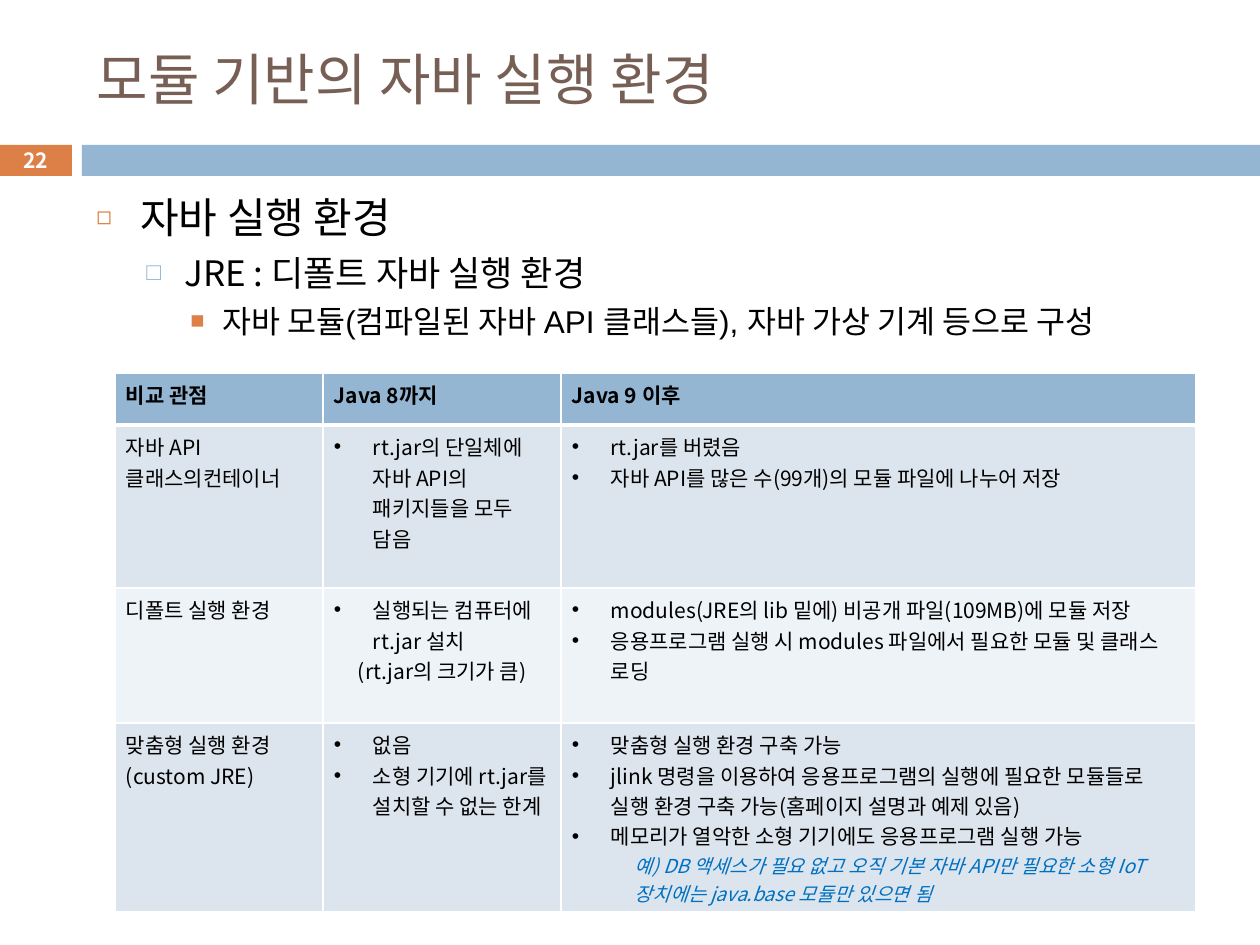
"""Builds a slide comparing Java runtime environments before and after modules."""
from lxml import etree
from pptx import Presentation
from pptx.dml.color import RGBColor
from pptx.enum.shapes import MSO_SHAPE
from pptx.enum.text import MSO_ANCHOR, PP_ALIGN
from pptx.oxml.ns import qn
from pptx.util import Pt

RECT = MSO_SHAPE.RECTANGLE
MIDDLE, TOP = MSO_ANCHOR.MIDDLE, MSO_ANCHOR.TOP
LEFT, CENTER = PP_ALIGN.LEFT, PP_ALIGN.CENTER

EMU_PER_PX = 914400 // 126
FONT = "Noto Sans CJK KR"
BLACK = RGBColor(0x00, 0x00, 0x00)
WHITE = RGBColor(0xFF, 0xFF, 0xFF)
BROWN = RGBColor(0x77, 0x5F, 0x55)
ORANGE = RGBColor(0xDD, 0x80, 0x47)
BLUE = RGBColor(0x94, 0xB6, 0xD2)
BAND_DARK = RGBColor(0xDC, 0xE5, 0xEE)
BAND_LIGHT = RGBColor(0xEE, 0xF3, 0xF7)
EXAMPLE_BLUE = RGBColor(0x00, 0x70, 0xC0)

TITLE = "모듈 기반의 자바 실행 환경"
PAGE = "22"

OUTLINE = [
    ("자바 실행 환경",
     dict(size=24, left=44, hang=44, before=7, bullet=("◻", ORANGE, 60))),
    ("JRE : 디폴트 자바 실행 환경",
     dict(size=20, left=88, hang=38, before=5.5, bullet=("□", BLUE, 70))),
    ("자바 모듈(컴파일된 자바 API 클래스들), 자바 가상 기계 등으로 구성",
     dict(size=18, left=126, hang=32, before=5, bullet=("■", ORANGE, 75), font="Arial")),
]

PLAIN = dict(size=12)
HEAD = dict(size=12, bold=True)
ITEM = dict(size=12, left=39, hang=39, bullet=("•", BLACK, 100))
ASIDE = dict(size=12, left=24)
EXAMPLE = dict(size=11, left=63, color=EXAMPLE_BLUE, italic=True)

COLUMNS = [208, 238, 635]
ROWS = [
    (52, BLUE, [
        [("비교 관점", HEAD)],
        [("Java 8까지", HEAD)],
        [("Java 9 이후", HEAD)],
    ]),
    (163, BAND_DARK, [
        [("자바 API 클래스의컨테이너", PLAIN)],
        [("rt.jar의 단일체에 자바 API의 패키지들을 모두 담음", ITEM)],
        [("rt.jar를 버렸음", ITEM),
         ("자바 API를 많은 수(99개)의 모듈 파일에 나누어 저장", ITEM)],
    ]),
    (135, BAND_LIGHT, [
        [("디폴트 실행 환경", PLAIN)],
        [("실행되는 컴퓨터에 rt.jar 설치", ITEM),
         ("(rt.jar의 크기가 큼)", ASIDE)],
        [("modules(JRE의 lib 밑에) 비공개 파일(109MB)에 모듈 저장", ITEM),
         ("응용프로그램 실행 시 modules 파일에서 필요한 모듈 및 클래스 로딩", ITEM)],
    ]),
    (189, BAND_DARK, [
        [("맞춤형 실행 환경(custom JRE)", PLAIN)],
        [("없음", ITEM),
         ("소형 기기에 rt.jar를 설치할 수 없는 한계", ITEM)],
        [("맞춤형 실행 환경 구축 가능", ITEM),
         ("jlink 명령을 이용하여 응용프로그램의 실행에 필요한 모듈들로 "
          "실행 환경 구축 가능(홈페이지 설명과 예제 있음)", ITEM),
         ("메모리가 열악한 소형 기기에도 응용프로그램 실행 가능", ITEM),
         ("예) DB 액세스가 필요 없고 오직 기본 자바 API만 필요한 소형 "
          "IoT 장치에는 java.base 모듈만 있으면 됨", EXAMPLE)],
    ]),
]


def px(*values):
    return [v * EMU_PER_PX for v in values]


def child(parent, tag, **attrs):
    return etree.SubElement(parent, qn(tag), {k: str(v) for k, v in attrs.items()})


def write(p, text, size, color=BLACK, bold=False, italic=False, font=FONT,
          align=LEFT, left=0, hang=0, before=0, bullet=None):
    p.alignment = align
    p.space_before = Pt(before)
    pPr = p._p.get_or_add_pPr()
    pPr.set("marL", str(left * EMU_PER_PX))
    pPr.set("indent", str(-hang * EMU_PER_PX))
    if bullet:
        char, tint, percent = bullet
        child(child(pPr, "a:buClr"), "a:srgbClr", val=tint)
        child(pPr, "a:buSzPct", val=percent * 1000)
        child(pPr, "a:buFont", typeface="Arial")
        child(pPr, "a:buChar", char=char)
    else:
        child(pPr, "a:buNone")
    r = p.add_run()
    r.text = text
    f = r.font
    f.size, f.bold, f.italic, f.name = Pt(size), bold, italic, font
    f.color.rgb = color
    child(r._r.get_or_add_rPr(), "a:ea", typeface=FONT)


def fill_text(tf, paragraphs):
    tf.word_wrap = True
    for i, (text, fmt) in enumerate(paragraphs):
        write(tf.add_paragraph() if i else tf.paragraphs[0], text, **fmt)


def add_bar(s, box, color):
    sp = s.shapes.add_shape(RECT, *px(*box))
    sp.shadow.inherit = False
    sp.fill.solid()
    sp.fill.fore_color.rgb = color
    sp.line.fill.background()
    return sp


def set_borders(cell, bottom):
    tcPr = cell._tc.get_or_add_tcPr()
    widths = {"a:lnL": 1, "a:lnR": 1, "a:lnT": 1, "a:lnB": bottom}
    for i, (tag, width) in enumerate(widths.items()):
        ln = child(tcPr, tag, w=Pt(width))
        child(child(ln, "a:solidFill"), "a:srgbClr", val=WHITE)
        tcPr.insert(i, ln)


def add_comparison(s):
    heights = [height for height, _, _ in ROWS]
    table = s.shapes.add_table(len(ROWS), len(COLUMNS),
                               *px(115, 373, sum(COLUMNS), sum(heights))).table
    for column, width in zip(table.columns, COLUMNS):
        column.width = width * EMU_PER_PX
    for i, (height, color, cells) in enumerate(ROWS):
        table.rows[i].height = height * EMU_PER_PX
        for j, paragraphs in enumerate(cells):
            cell = table.cell(i, j)
            cell.margin_left = cell.margin_right = 11 * EMU_PER_PX
            cell.vertical_anchor = TOP
            cell.fill.solid()
            cell.fill.fore_color.rgb = color
            set_borders(cell, 1 if i else 3)
            fill_text(cell.text_frame, paragraphs)


def main():
    prs = Presentation()
    prs.slide_width, prs.slide_height = px(1260, 945)
    s = prs.slides.add_slide(prs.slide_layouts[5])

    title = s.shapes.title
    title.left, title.top, title.width, title.height = px(84, 32, 1124, 93)
    title.text_frame.vertical_anchor = MIDDLE
    fill_text(title.text_frame, [(TITLE, dict(size=32, color=BROWN))])

    tf = add_bar(s, (-1, 145, 73, 31), ORANGE).text_frame
    tf.margin_top = tf.margin_bottom = 0
    tf.vertical_anchor = MIDDLE
    fill_text(tf, [(PAGE, dict(size=12, color=WHITE, bold=True, align=CENTER))])
    add_bar(s, (82, 145, 1178, 31), BLUE)

    body = s.shapes.add_textbox(*px(84, 185, 1124, 170))
    fill_text(body.text_frame, OUTLINE)
    add_comparison(s)
    prs.save("out.pptx")


if __name__ == "__main__":
    main()
